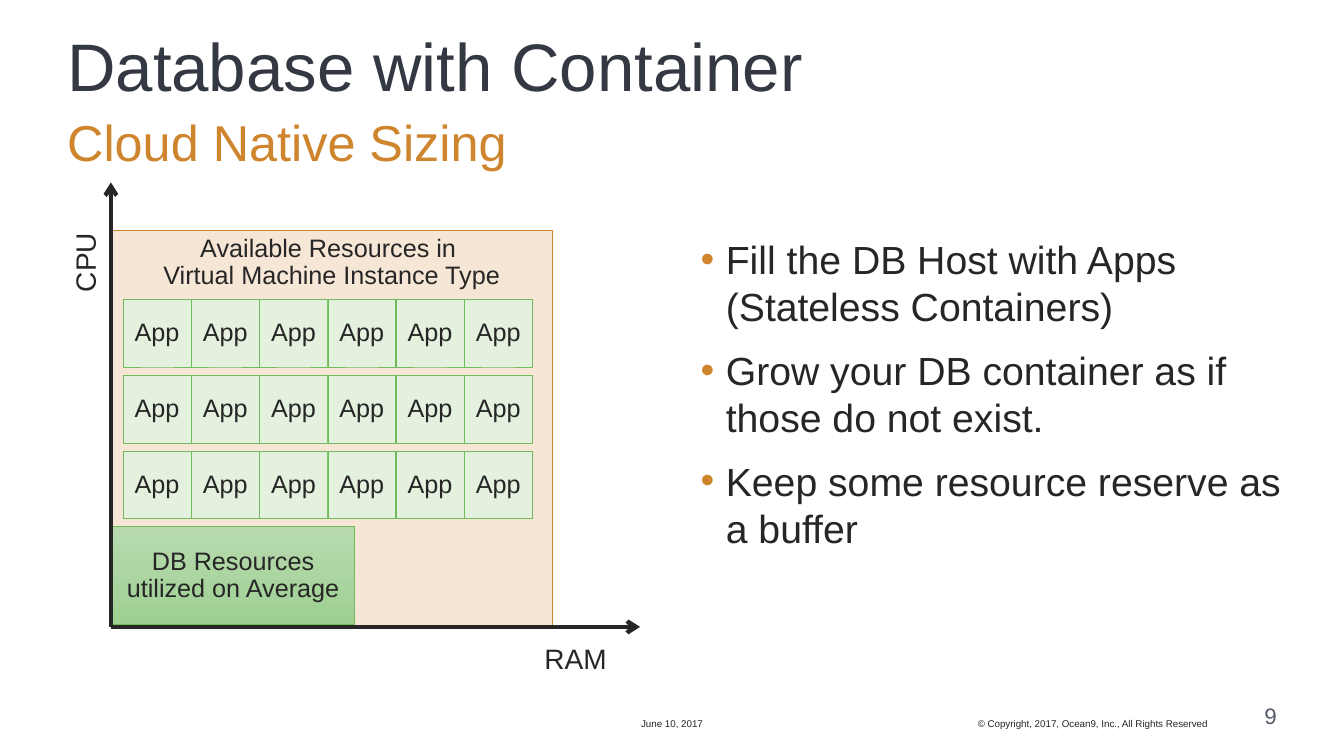
from dataclasses import dataclass

from lxml.etree import SubElement
from pptx import Presentation
from pptx.dml.color import RGBColor
from pptx.enum.shapes import MSO_CONNECTOR, MSO_SHAPE
from pptx.enum.text import MSO_ANCHOR, PP_ALIGN
from pptx.oxml.ns import qn
from pptx.util import Pt


@dataclass(frozen=True)
class Theme:
    font: str = "Arial"
    ink: str = "262626"
    heading: str = "343842"
    accent: str = "CF842E"
    muted: str = "555B6B"
    host: str = "F6E6D5"
    app: str = "E3F1DE"
    green: str = "71BA5B"
    database: tuple = ("B8DAB0", "9ED092")
    title_size: float = 48
    subtitle_size: float = 36
    bullet_size: float = 28
    axis_size: float = 20
    label_size: float = 18
    number_size: float = 16
    footer_size: float = 7


THEME = Theme()


def color(value):
    return RGBColor.from_string(value)


def write(para, text, size, ink=THEME.ink, align=PP_ALIGN.LEFT, spacing=None):
    """Fill a paragraph, turning each newline into a line break."""
    para.alignment = align
    para.line_spacing = spacing
    for index, line in enumerate(text.split("\n")):
        if index:
            para.add_line_break()
        span = para.add_run()
        span.text = line
        span.font.name = THEME.font
        span.font.size = Pt(size)
        span.font.color.rgb = color(ink)


def add_frame(page, left, top, width, height, anchor=MSO_ANCHOR.TOP, wrap=True):
    """Add a text box without insets."""
    box = page.shapes.add_textbox(Pt(left), Pt(top), Pt(width), Pt(height))
    frame = box.text_frame
    frame.margin_left = frame.margin_top = frame.margin_right = frame.margin_bottom = 0
    frame.word_wrap = wrap
    frame.vertical_anchor = anchor
    return box


def add_block(page, left, top, width, height, text, fill, line, anchor=MSO_ANCHOR.MIDDLE):
    """Add a labelled rectangle; a pair of fills gives a vertical gradient."""
    block = page.shapes.add_shape(
        MSO_SHAPE.RECTANGLE, Pt(left), Pt(top), Pt(width), Pt(height))
    block.shadow.inherit = False
    if isinstance(fill, tuple):
        block.fill.gradient()
        block.fill.gradient_angle = 270
        for stop, shade in zip(block.fill.gradient_stops, fill):
            stop.color.rgb = color(shade)
    else:
        block.fill.solid()
        block.fill.fore_color.rgb = color(fill)
    block.line.color.rgb = color(line)
    block.line.width = Pt(0.5)
    block.text_frame.word_wrap = True
    block.text_frame.vertical_anchor = anchor
    write(block.text_frame.paragraphs[0], text, THEME.label_size,
          align=PP_ALIGN.CENTER, spacing=0.9)


def add_axis(page, start, end):
    axis = page.shapes.add_connector(
        MSO_CONNECTOR.STRAIGHT, *(Pt(value) for value in start + end))
    axis.line.color.rgb = color(THEME.ink)
    axis.line.width = Pt(3)
    SubElement(axis.line._get_or_add_ln(), qn("a:tailEnd"), type="arrow")
    SubElement(axis._element.spPr, qn("a:effectLst"))


def add_axis_label(page, left, top, width, height, text, rotation=0):
    box = add_frame(page, left, top, width, height, MSO_ANCHOR.MIDDLE, wrap=not rotation)
    box.rotation = rotation
    write(box.text_frame.paragraphs[0], text, THEME.axis_size,
          align=PP_ALIGN.CENTER, spacing=0.9)


def add_header(page, left, top, width):
    title = add_frame(page, left, top, width, 54)
    write(title.text_frame.paragraphs[0], "Database with Container",
          THEME.title_size, THEME.heading, spacing=0.9)
    subtitle = add_frame(page, left, top + 60, width, 42)
    write(subtitle.text_frame.paragraphs[0], "Cloud Native Sizing",
          THEME.subtitle_size, THEME.accent, spacing=0.9)


def add_sizing_chart(page, left, top, width, height):
    """Draw the axes around the box, with the host, its apps and the database inside."""
    bottom = top + height
    host_width, host_height = 315.5, 282.5
    host_top = bottom - host_height - 0.5
    add_block(page, left, host_top, host_width, host_height,
              "Available Resources in \nVirtual Machine Instance Type",
              THEME.host, THEME.accent, MSO_ANCHOR.TOP)
    add_block(page, left + 0.5, bottom - 72, 173.5, 70.5,
              "DB Resources utilized on Average", THEME.database, THEME.green)

    rows, columns, side = 3, 6, 48.4
    column_step, row_step = 48.75, 54.2
    for row in range(rows):
        for column in range(columns):
            add_block(page, left + 8.8 + column * column_step,
                      host_top + 49 + row * row_step, side, side,
                      "App", THEME.app, THEME.green)

    add_axis_label(page, left - 53.2, top + 43.5, 72, 27.5, "CPU", 270)
    add_axis_label(page, left + 296, bottom + 10, 72, 28, "RAM")
    add_axis(page, (left, bottom), (left, top))
    add_axis(page, (left, bottom), (left + width, bottom))


def add_bullets(page, left, top, width, height, points):
    frame = add_frame(page, left, top, width, height).text_frame
    for index, point in enumerate(points):
        para = frame.add_paragraph() if index else frame.paragraphs[0]
        write(para, point, THEME.bullet_size, spacing=Pt(33.6))
        para.space_before = Pt(12 if index else 0)
        props = para._p.get_or_add_pPr()
        props.set("marL", str(Pt(18)))
        props.set("indent", str(-Pt(18)))
        SubElement(SubElement(props, qn("a:buClr")), qn("a:srgbClr"), val=THEME.accent)
        SubElement(props, qn("a:buFont"), typeface=THEME.font)
        SubElement(props, qn("a:buChar"), char="•")


def add_footer(page, top, height):
    notes = (
        (441, 78, "June 10, 2017", THEME.footer_size, THEME.ink, PP_ALIGN.CENTER),
        (546, 316.5, "© Copyright, 2017, Ocean9, Inc., All Rights Reserved",
         THEME.footer_size, THEME.ink, PP_ALIGN.RIGHT),
        (870, 42, "9", THEME.number_size, THEME.muted, PP_ALIGN.RIGHT),
    )
    for left, width, text, size, ink, align in notes:
        box = add_frame(page, left, top, width, height, MSO_ANCHOR.BOTTOM)
        write(box.text_frame.paragraphs[0], text, size, ink, align)


def main():
    deck = Presentation()
    deck.slide_width, deck.slide_height = Pt(960), Pt(540)
    page = deck.slides.add_slide(deck.slide_layouts[6])
    add_header(page, 48, 24, 864)
    add_sizing_chart(page, 79.2, 130.3, 378, 317.5)
    add_bullets(page, 500.5, 168, 417.5, 342, (
        "Fill the DB Host with Apps (Stateless Containers)",
        "Grow your DB container as if those do not exist.",
        "Keep some resource reserve as a buffer",
    ))
    add_footer(page, 504, 17)
    deck.save("out.pptx")


if __name__ == "__main__":
    main()
